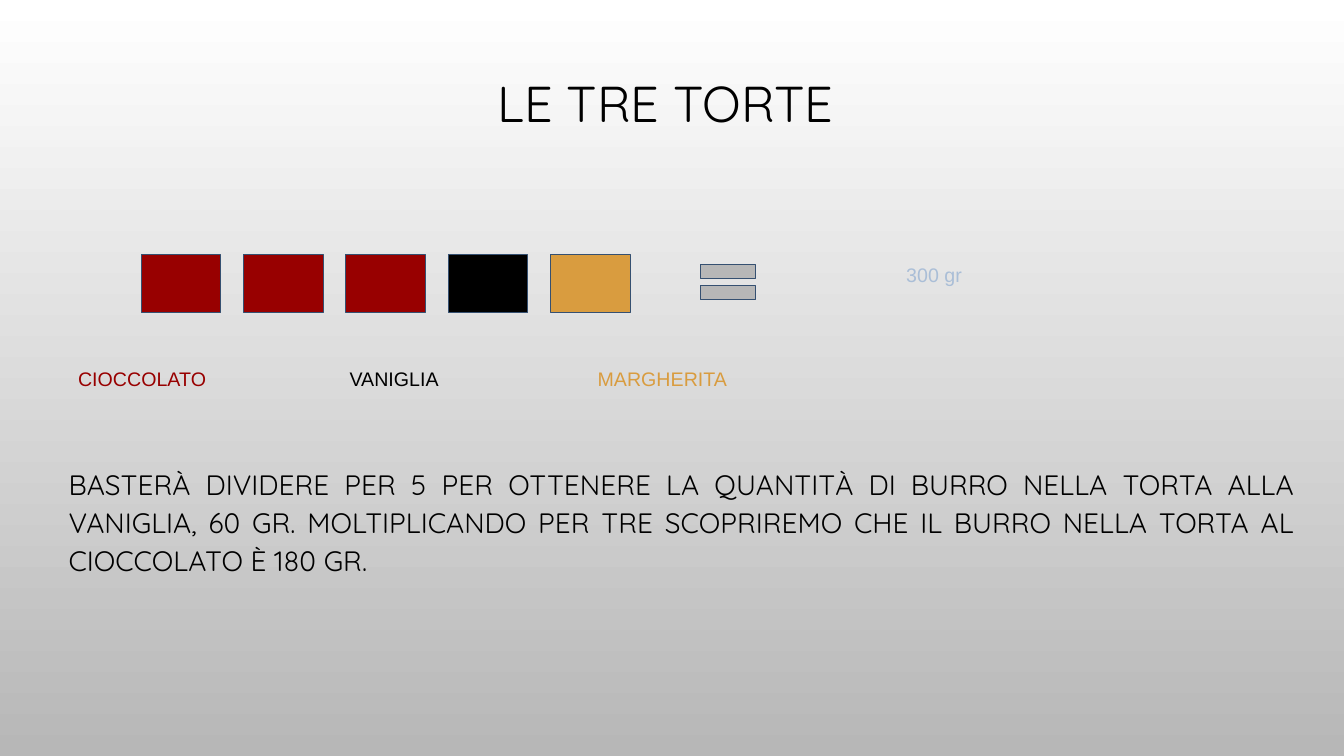
from dataclasses import dataclass

from pptx import Presentation
from pptx.dml.color import RGBColor
from pptx.enum.shapes import MSO_SHAPE
from pptx.enum.text import PP_ALIGN
from pptx.util import Inches, Pt


@dataclass(frozen=True)
class Theme:
    chocolate: str = "980000"
    black: str = "000000"
    margherita: str = "D99C3F"
    grey: str = "B7B7B7"
    white: str = "FFFFFF"
    outline: str = "355071"
    pale_blue: str = "AABED7"
    heading_font: str = "Quicksand"
    label_font: str = "Arial"
    title_size: int = 36
    body_size: int = 20
    label_size: int = 14


THEME = Theme()


def set_background(s):
    fill = s.background.fill
    fill.gradient()
    fill.gradient_angle = 270
    for stop, color in zip(fill.gradient_stops, (THEME.white, THEME.grey)):
        stop.color.rgb = RGBColor.from_string(color)


def add_text(s, text, box, font, size, color, align=PP_ALIGN.CENTER,
             spacing=1.0, inset=(0.1, 0.05)):
    tf = s.shapes.add_textbox(*map(Inches, box)).text_frame
    tf.word_wrap = True
    tf.margin_left = tf.margin_right = Inches(inset[0])
    tf.margin_top = tf.margin_bottom = Inches(inset[1])
    p = tf.paragraphs[0]
    p.text = text
    p.alignment = align
    p.line_spacing = spacing
    p.font.name = font
    p.font.size = Pt(size)
    p.font.color.rgb = RGBColor.from_string(color)


def add_label(s, text, box, color):
    add_text(s, text, box, THEME.label_font, THEME.label_size, color)


def add_outlined_shape(s, kind, box, color):
    sp = s.shapes.add_shape(kind, *map(Inches, box))
    sp.shadow.inherit = False
    sp.fill.solid()
    sp.fill.fore_color.rgb = RGBColor.from_string(color)
    sp.line.color.rgb = RGBColor.from_string(THEME.outline)
    sp.line.width = Pt(0.75)


def add_butter_parts(s):
    """Draw one square per equal part of butter, coloured by cake."""
    colors = [THEME.chocolate] * 3 + [THEME.black, THEME.margherita]
    pitch = (5.46 - 1.4) / 4
    for i, color in enumerate(colors):
        add_outlined_shape(s, MSO_SHAPE.RECTANGLE,
                           (1.4 + i * pitch, 2.53, 0.79, 0.57), color)


def main():
    prs = Presentation()
    prs.slide_width, prs.slide_height = Inches(13.33), Inches(7.5)
    s = prs.slides.add_slide(prs.slide_layouts[6])
    set_background(s)

    add_text(s, "LE TRE TORTE", (0.39, 0.65, 12.42, 0.84),
             THEME.heading_font, THEME.title_size, THEME.black,
             spacing=0.9, inset=(0.13, 0.13))
    add_text(s, "BASTERÀ DIVIDERE PER 5 PER OTTENERE LA QUANTITÀ DI BURRO "
                "NELLA TORTA ALLA VANIGLIA, 60 GR. MOLTIPLICANDO PER TRE "
                "SCOPRIREMO CHE IL BURRO NELLA TORTA AL CIOCCOLATO È 180 GR.",
             (0.55, 4.46, 12.42, 1.47),
             THEME.heading_font, THEME.body_size, THEME.black,
             align=PP_ALIGN.JUSTIFY, spacing=1.14, inset=(0.13, 0.13))

    add_butter_parts(s)
    add_outlined_shape(s, MSO_SHAPE.MATH_EQUAL, (6.85, 2.5, 0.74, 0.6),
                       THEME.grey)
    add_label(s, "300 gr", (8.25, 2.56, 2.03, 0.66), THEME.pale_blue)

    add_label(s, "CIOCCOLATO", (0.16, 3.59, 2.5, 0.33), THEME.chocolate)
    add_label(s, "VANIGLIA", (2.81, 3.59, 2.2, 0.33), THEME.black)
    add_label(s, "MARGHERITA", (5.32, 3.59, 2.5, 0.33), THEME.margherita)

    prs.save("out.pptx")


if __name__ == "__main__":
    main()
